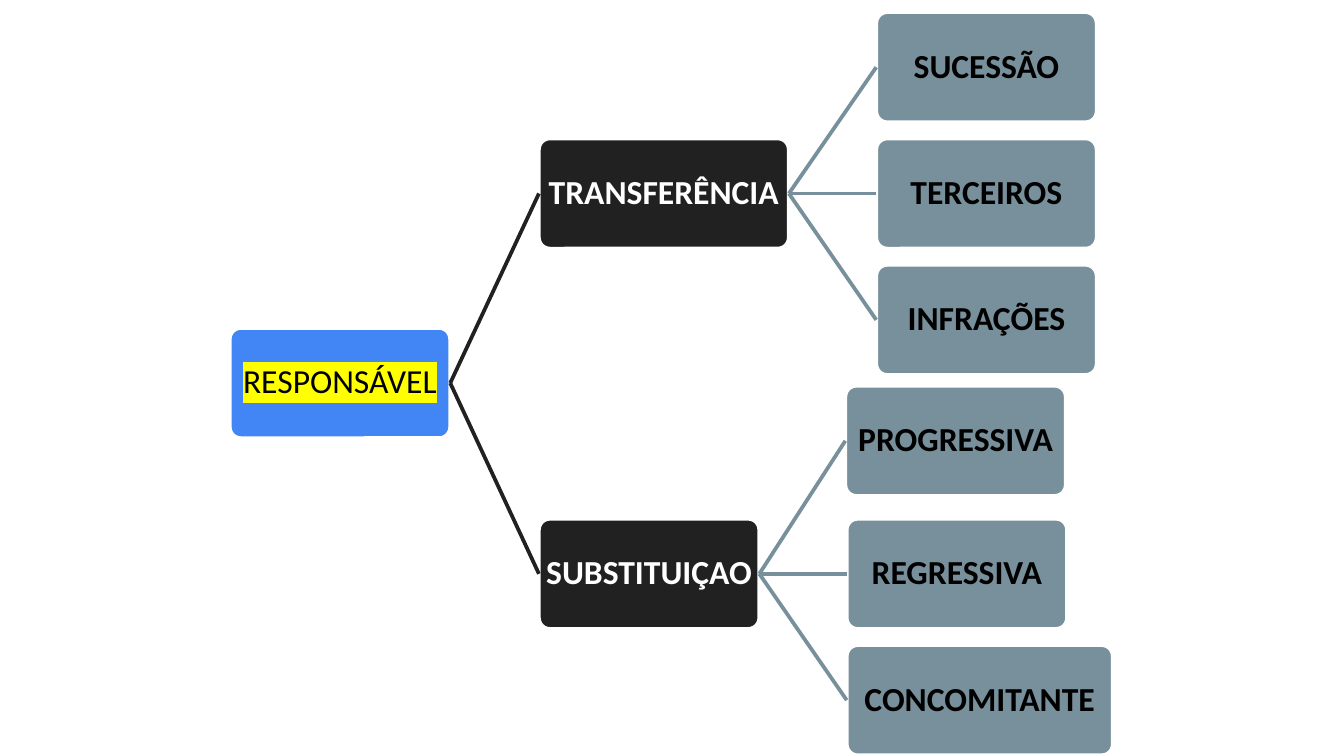
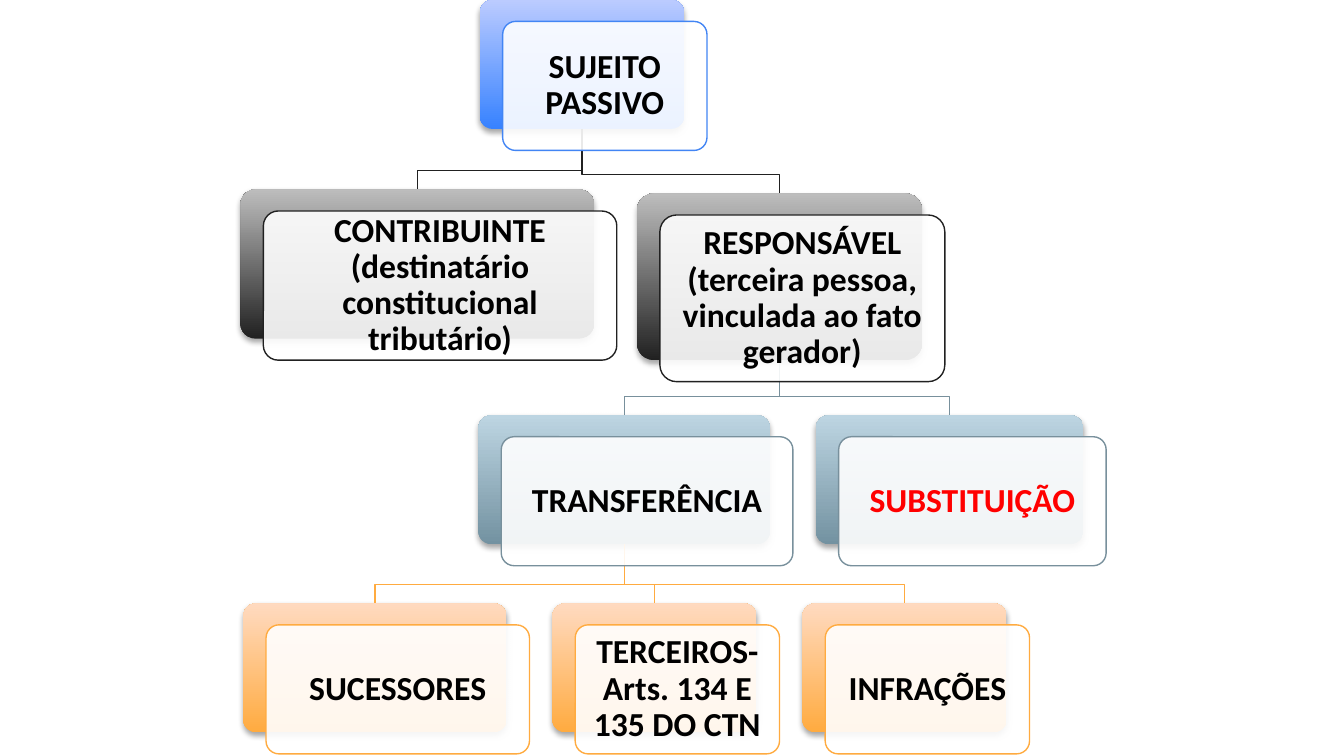
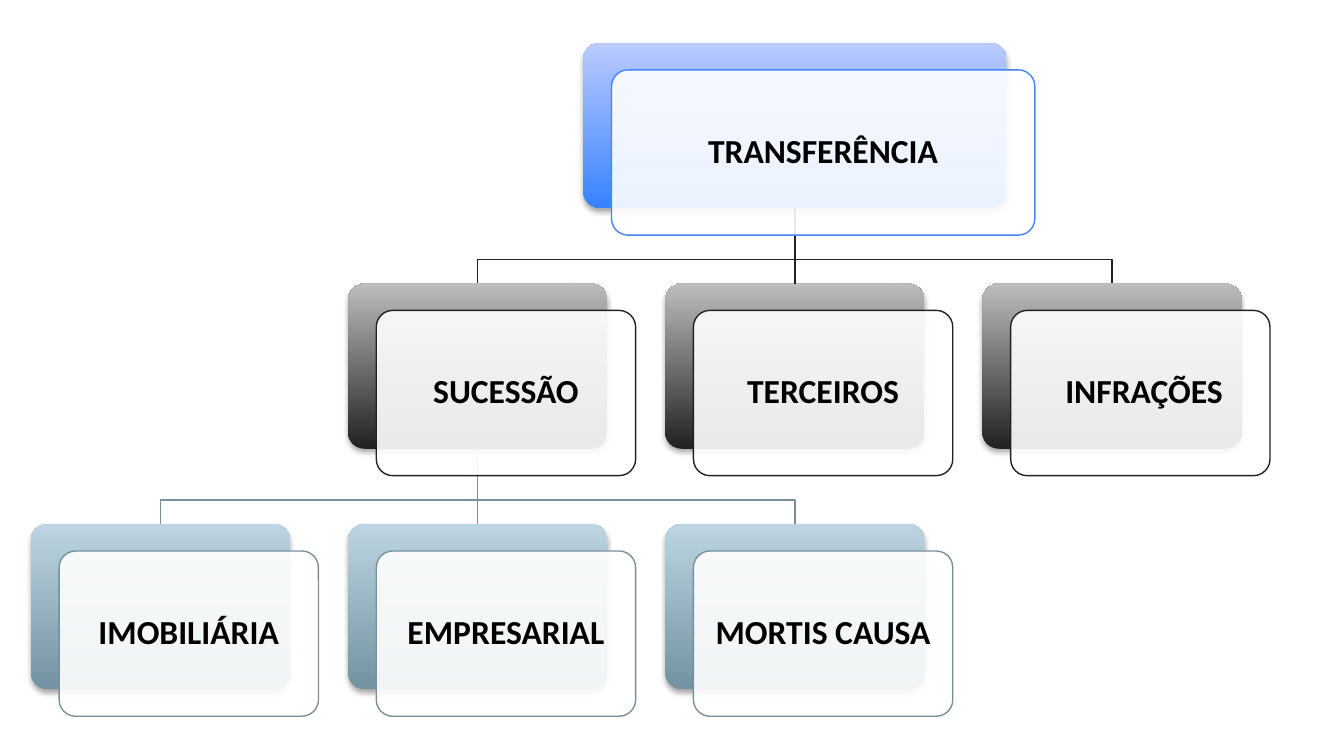
"""Build three tree diagrams about tax liability."""
from lxml.etree import SubElement
from pptx import Presentation
from pptx.dml.color import RGBColor
from pptx.enum.shapes import MSO_CONNECTOR, MSO_SHAPE
from pptx.enum.text import MSO_ANCHOR, PP_ALIGN
from pptx.oxml.ns import qn
from pptx.util import Inches, Pt

BLACK, WHITE, RED, YELLOW = "000000", "FFFFFF", "FF0000", "FFFF00"
BLUE, DARK, SLATE, ORANGE = "4285F4", "212121", "78909C", "FFAB40"
LEVELS = [
    ("3782FF", "BBCBFF", BLUE),
    (DARK, "BDBDBD", DARK),
    ("7392A1", "BDD5E2", SLATE),
    (ORANGE, "FFDAC0", ORANGE),
]


def add_box(slide, left, top, width, height, fill, label="", ink=BLACK, inset=0.07):
    """Add a rounded box with a plain fill and a centred bold label."""
    box = slide.shapes.add_shape(
        MSO_SHAPE.ROUNDED_RECTANGLE, Inches(left), Inches(top), Inches(width), Inches(height))
    box.adjustments[0] = 0.1
    box.shadow.inherit = False
    box.fill.solid()
    box.fill.fore_color.rgb = RGBColor.from_string(fill)
    box.line.fill.background()
    if label:
        frame = box.text_frame
        frame.word_wrap = True
        frame.vertical_anchor = MSO_ANCHOR.MIDDLE
        frame.margin_left = frame.margin_right = Inches(inset)
        frame.margin_top = frame.margin_bottom = Inches(inset)
        paragraph = frame.paragraphs[0]
        paragraph.text = label
        paragraph.alignment = PP_ALIGN.CENTER
        paragraph.line_spacing = 0.9
        paragraph.font.name = "Calibri"
        paragraph.font.size = Pt(18)
        paragraph.font.bold = True
        paragraph.font.color.rgb = RGBColor.from_string(ink)
    return box


def add_link(slide, parent, child, sides, colour, weight):
    """Join two boxes with a straight line between the given sides."""
    link = slide.shapes.add_connector(MSO_CONNECTOR.STRAIGHT, 0, 0, 0, 0)
    link.begin_connect(parent, sides[0])
    link.end_connect(child, sides[1])
    link.line.color.rgb = RGBColor.from_string(colour)
    link.line.width = Pt(weight)
    SubElement(link._element.spPr, qn("a:effectLst"))


prs = Presentation()
prs.slide_width = Inches(10)
prs.slide_height = prs.slide_width * 9 // 16
blank = prs.slide_layouts[6]

liability = prs.slides.add_slide(blank)
nodes = [
    ("RESPONSÁVEL", 1.71, 2.44, 1.64, BLUE, BLACK, None),
    ("TRANSFERÊNCIA", 4.01, 1.03, 1.86, DARK, WHITE, 0),
    ("SUCESSÃO", 6.52, 0.09, 1.64, SLATE, BLACK, 1),
    ("TERCEIROS", 6.52, 1.03, 1.64, SLATE, BLACK, 1),
    ("INFRAÇÕES", 6.52, 1.97, 1.64, SLATE, BLACK, 1),
    ("SUBSTITUIÇAO", 4.01, 3.86, 1.64, DARK, WHITE, 0),
    ("PROGRESSIVA", 6.29, 2.87, 1.64, SLATE, BLACK, 5),
    ("REGRESSIVA", 6.3, 3.86, 1.64, SLATE, BLACK, 5),
    ("CONCOMITANTE", 6.3, 4.8, 1.98, SLATE, BLACK, 5),
]
boxes = []
for label, left, top, width, fill, ink, parent in nodes:
    box = add_box(liability, left, top, width, 0.82, fill, label, ink, 0.01)
    box.line.color.rgb = RGBColor.from_string(WHITE)
    box.line.width = Pt(2)
    if parent is not None:
        add_link(liability, boxes[parent], box, (3, 1), fill, 2)
    boxes.append(box)

root = boxes[0].text_frame.paragraphs[0]
root.font.bold = False
highlight = SubElement(root.runs[0]._r.get_or_add_rPr(), qn("a:highlight"))
SubElement(highlight, qn("a:srgbClr"), val=YELLOW)

taxpayer_cards = [
    ("SUJEITO PASSIVO", 3.57, 0, 1.52, 0.96, 0, None, BLACK),
    ("CONTRIBUINTE (destinatário constitucional tributário)", 1.79, 1.41, 2.63, 1.11, 1, 0, BLACK),
    ("RESPONSÁVEL (terceira pessoa, vinculada ao fato gerador)", 4.74, 1.44, 2.12, 1.24, 1, 0, BLACK),
    ("TRANSFERÊNCIA", 3.56, 3.09, 2.17, 0.96, 2, 2, BLACK),
    ("SUCESSORES", 1.81, 4.49, 1.96, 0.96, 3, 3, BLACK),
    ("TERCEIROS- Arts. 134 E 135 DO CTN", 4.11, 4.49, 1.52, 0.96, 3, 3, BLACK),
    ("INFRAÇÕES", 5.97, 4.49, 1.52, 0.96, 3, 3, BLACK),
    ("SUBSTITUIÇÃO", 6.07, 3.09, 1.99, 0.96, 2, 2, RED),
]
transfer_cards = [("TRANSFERÊNCIA", 4.34, 0.32, 3.15, 1.23, 0, None, BLACK)]
for label, column, row, parent in [
    ("SUCESSÃO", 1, 1, 0),
    ("IMOBILIÁRIA", 0, 2, 1),
    ("EMPRESARIAL", 1, 2, 1),
    ("MORTIS CAUSA", 2, 2, 1),
    ("TERCEIROS", 2, 1, 0),
    (" INFRAÇÕES", 3, 1, 0),
]:
    transfer_cards.append(
        (label, 0.23 + 2.36 * column, 0.32 + 1.79 * row, 1.93, 1.23, row, parent, BLACK))

for cards, shift, drop in [(taxpayer_cards, 0.17, 0.14), (transfer_cards, 0.21, 0.18)]:
    hierarchy = prs.slides.add_slide(blank)
    backs = []
    for label, left, top, width, height, level, parent, ink in cards:
        dark, light, outline = LEVELS[level]
        back = add_box(hierarchy, left, top, width, height, dark)
        back.fill.gradient()
        back.fill.gradient_angle = 90
        for stop, shade in zip(back.fill.gradient_stops, (dark, light)):
            stop.color.rgb = RGBColor.from_string(shade)
        shadow = SubElement(
            back._element.spPr.find(qn("a:effectLst")), qn("a:outerShdw"),
            blurRad=str(Pt(3.1)), dist=str(Pt(1.8)), dir="5400000", rotWithShape="0")
        shadow_colour = SubElement(shadow, qn("a:srgbClr"), val=BLACK)
        SubElement(shadow_colour, qn("a:alpha"), val="35000")
        backs.append(back)

    for back, card in zip(backs, cards):
        level, parent = card[5:7]
        if parent is None:
            continue
        outline = LEVELS[level][2]
        above = backs[parent]
        start_x, end_x = above.left + above.width // 2, back.left + back.width // 2
        if abs(start_x - end_x) < Inches(0.02):
            add_link(hierarchy, above, back, (2, 0), outline, 0.75)
            continue
        turn_y = back.top - Inches(drop)
        route = hierarchy.shapes.build_freeform(start_x, above.top + above.height)
        route.add_line_segments(
            [(start_x, turn_y), (end_x, turn_y), (end_x, back.top)], close=False)
        branch = route.convert_to_shape()
        branch.shadow.inherit = False
        branch.fill.background()
        branch.line.color.rgb = RGBColor.from_string(outline)
        branch.line.width = Pt(0.75)

    for label, left, top, width, height, level, parent, ink in cards:
        glass = add_box(hierarchy, left + shift, top + shift - 0.01, width, height, WHITE, label, ink)
        glass.line.color.rgb = RGBColor.from_string(LEVELS[level][2])
        glass.line.width = Pt(0.75)
        tint = glass._element.spPr.find(qn("a:solidFill"))[0]
        SubElement(tint, qn("a:alpha"), val="90000")

prs.save("out.pptx")
